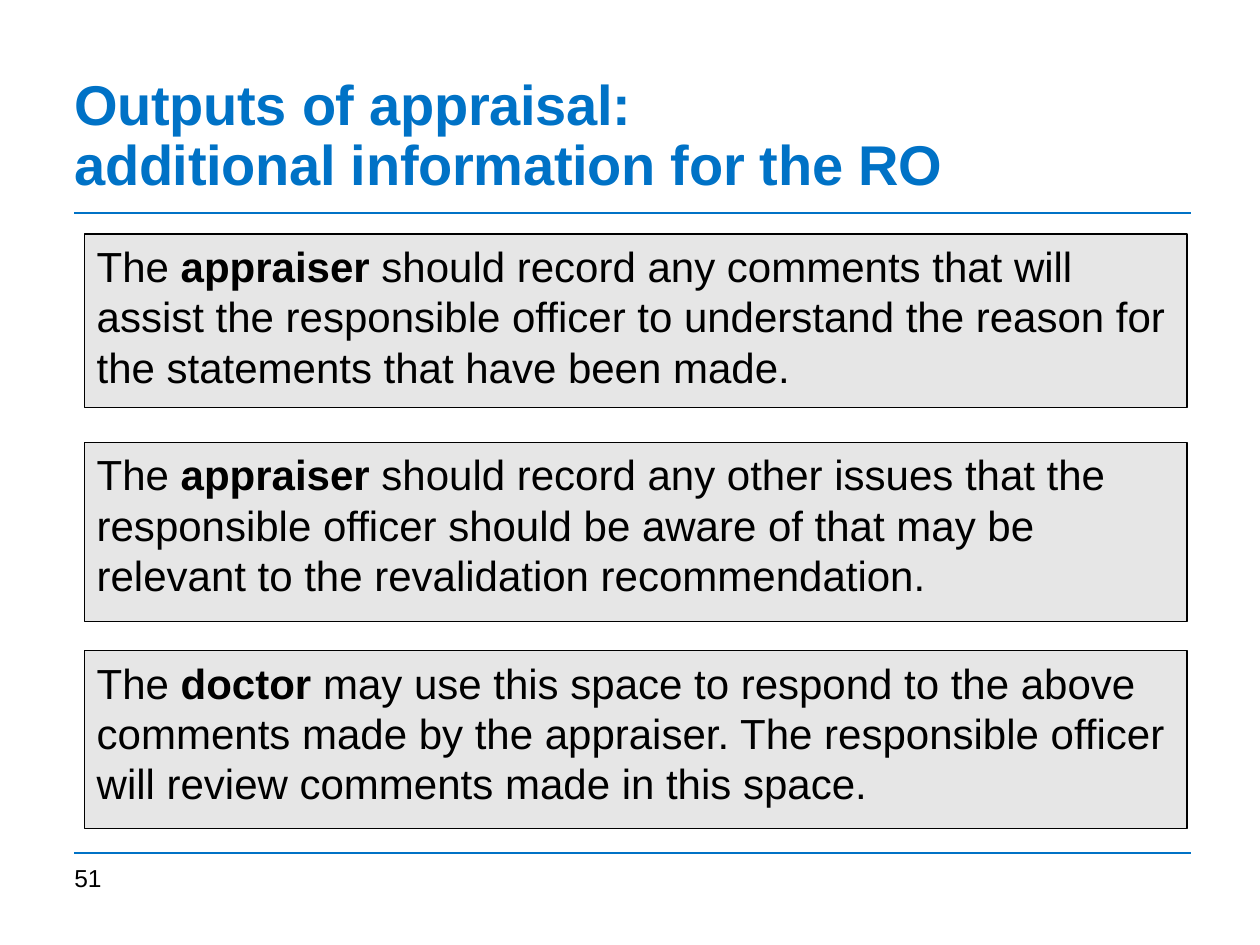
from pptx import Presentation
from pptx.dml.color import RGBColor
from pptx.enum.shapes import MSO_CONNECTOR, MSO_SHAPE
from pptx.enum.text import MSO_ANCHOR, PP_ALIGN
from pptx.oxml.ns import qn
from pptx.util import Cm, Pt
from lxml import etree

STRAIGHT = MSO_CONNECTOR.STRAIGHT
RECTANGLE = MSO_SHAPE.RECTANGLE
TOP, BOTTOM = MSO_ANCHOR.TOP, MSO_ANCHOR.BOTTOM
LEFT = PP_ALIGN.LEFT

FONT = "Arial"
COLOURS = {"blue": "0072C6", "grey": "E6E6E6", "black": "000000"}
MARGIN = Cm(1.5)


def colour(name):
    return RGBColor.from_string(COLOURS[name])


def set_font(paragraph, size, name):
    paragraph.alignment = LEFT
    paragraph.font.name = FONT
    paragraph.font.size = Pt(size)
    paragraph.font.color.rgb = colour(name)


deck = Presentation()
deck.slide_width, deck.slide_height = Cm(25.4), Cm(19.05)
page = deck.slides.add_slide(deck.slide_layouts[6])

# Rules below the title and above the page number
for y in (4.29, 17.2):
    rule = page.shapes.add_connector(STRAIGHT, MARGIN, Cm(y), Cm(24), Cm(y))
    rule.line.color.rgb = colour("blue")
    rule.line.width = Pt(1.25)
    etree.SubElement(rule._element.spPr, qn("a:effectLst"))

# Title and page number
labels = [
    ("Outputs of appraisal:\vadditional information for the RO", 1.5, 2.49, 32, "blue", BOTTOM),
    ("51", 17.4, 1.02, 14, "black", TOP),
]
for text, top, height, size, ink, anchor in labels:
    box = page.shapes.add_textbox(MARGIN, Cm(top), Cm(22.4), Cm(height))
    frame = box.text_frame
    frame.word_wrap = True
    frame.vertical_anchor = anchor
    frame.margin_left = frame.margin_right = frame.margin_top = frame.margin_bottom = 0
    paragraph = frame.paragraphs[0]
    paragraph.text = text
    set_font(paragraph, size, ink)
    if anchor == BOTTOM:
        paragraph.font.bold = True
        paragraph.line_spacing = 0.9
        for span in paragraph.runs:
            span._r.get_or_add_rPr().set("spc", "-20")

# Statement boxes: height, then paragraphs as (text, bold) spans
statements = [
    (3.5, [[("The ", False), ("appraiser", True),
            (" should record any comments that will assist the responsible officer "
             "to understand the reason for the statements that have been made.", False)]]),
    (3.61, [[("The ", False), ("appraiser", True),
             (" should record any other issues that the responsible officer should be "
              "aware of that may be relevant to the revalidation recommendation.", False)]]),
    (3.58, [[("The ", False), ("doctor", True),
             (" may use this space to respond to the above comments made by the "
              "appraiser. The responsible officer", False)],
            [("will review comments made in this space.", False)]]),
]
for row, (height, paragraphs) in enumerate(statements):
    box = page.shapes.add_shape(RECTANGLE, Cm(1.7), Cm(4.72 + 4.2 * row), Cm(22.23), Cm(height))
    box.shadow.inherit = False
    box.fill.solid()
    box.fill.fore_color.rgb = colour("grey")
    box.line.color.rgb = colour("black")
    box.line.width = Pt(0.75)
    frame = box.text_frame
    frame.word_wrap = True
    frame.vertical_anchor = TOP
    for index, spans in enumerate(paragraphs):
        paragraph = frame.add_paragraph() if index else frame.paragraphs[0]
        set_font(paragraph, 24, "black")
        for text, bold in spans:
            span = paragraph.add_run()
            span.text = text
            span.font.bold = bold

deck.save("out.pptx")
